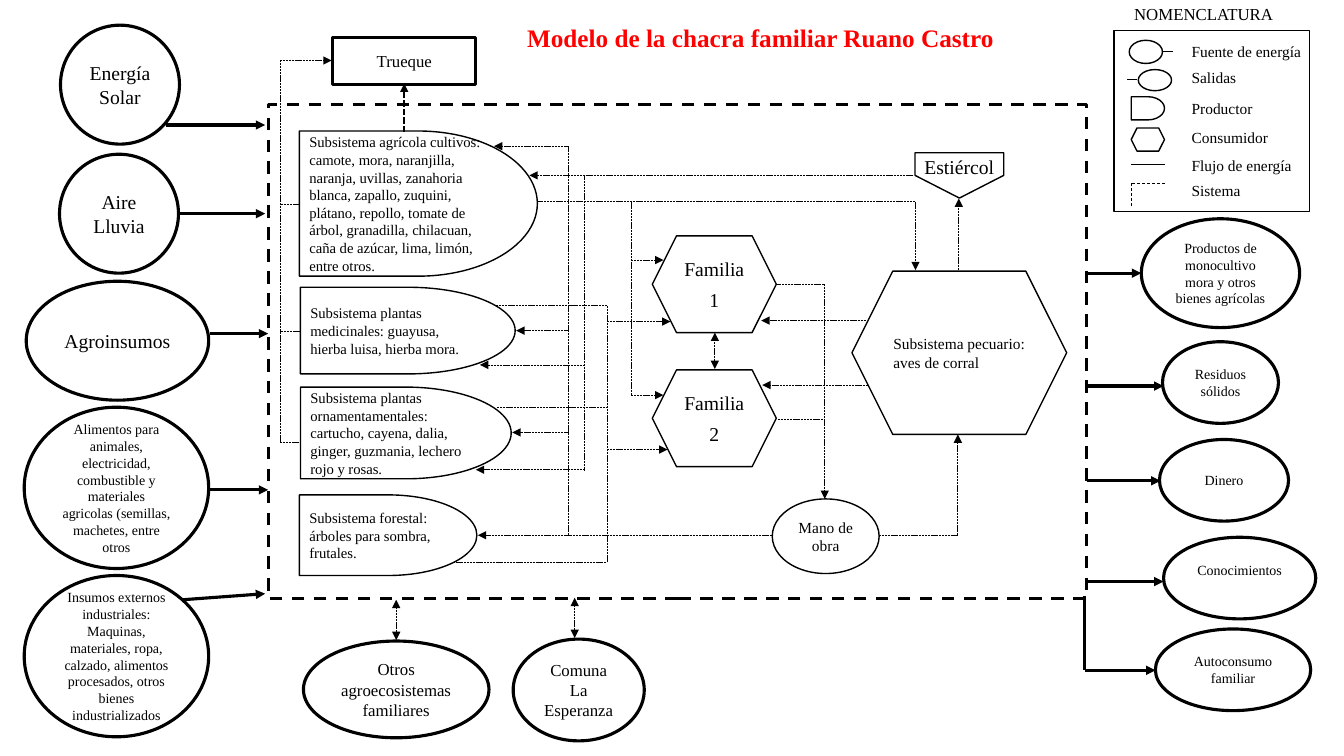
from lxml.etree import SubElement
from pptx import Presentation
from pptx.dml.color import RGBColor
from pptx.enum.dml import MSO_LINE
from pptx.enum.shapes import MSO_CONNECTOR, MSO_SHAPE
from pptx.enum.text import MSO_ANCHOR, PP_ALIGN
from pptx.oxml.ns import qn
from pptx.util import Inches, Pt

COLORS = {"ink": "000000", "paper": "FFFFFF", "title": "FF0000"}
FONT = "Times New Roman"
SLIDE_WIDTH, SLIDE_HEIGHT = 13.33, 7.5
ELLIPSE, DELAY = MSO_SHAPE.OVAL, MSO_SHAPE.FLOWCHART_DELAY
HEXAGON, RECTANGLE = MSO_SHAPE.HEXAGON, MSO_SHAPE.RECTANGLE
DOTTED, DASHED = MSO_LINE.SQUARE_DOT, MSO_LINE.DASH
THIN, NORMAL, THICK = 0.5, 1, 2.25

SYSTEM = (2.66, 1.04, 8.12, 4.9)
SYSTEM_RIGHT = SYSTEM[0] + SYSTEM[2]
SYSTEM_BOTTOM = SYSTEM[1] + SYSTEM[3]

INPUTS = [
    ((0.6, 0.25, 1.18, 1.18), 14, ["Energía", "Solar"]),
    ((0.59, 1.53, 1.18, 1.18), 14, ["Aire", "Lluvia"]),
    ((0.26, 2.79, 1.81, 1.18), 14, ["Agroinsumos"]),
    ((0.24, 4.04, 1.83, 1.6), 10, [
        "Alimentos para animales, electricidad, combustible y materiales agricolas (semillas, machetes, entre otros"]),
    ((0.24, 5.71, 1.83, 1.6), 10, [
        "Insumos externos industriales:",
        "Maquinas, materiales, ropa, calzado, alimentos procesados, otros bienes industrializados"]),
]
NEIGHBOURS = [
    ((3.01, 6.36, 1.84, 0.96), 12, ["Otros agroecosistemas familiares"]),
    ((5.09, 6.34, 1.3, 1.01), 12, ["Comuna La Esperanza"]),
]
OUTPUTS = [
    ((11.32, 2.17, 1.57, 1.08), 10, ["Productos de monocultivo mora y otros bienes agrícolas"]),
    ((11.53, 3.39, 1.15, 0.81), 10, ["Residuos sólidos"]),
    ((11.5, 4.36, 1.28, 0.81), 10, ["Dinero"]),
    ((11.46, 6.24, 1.54, 0.81), 10, ["Autoconsumo familiar"]),
]
KNOWLEDGE = (11.54, 5.33, 1.51, 0.81)
PRODUCERS = [
    ((2.97, 1.3, 2.36, 1.44),
     "Subsistema agrícola cultivos: camote, mora, naranjilla, naranja, uvillas, zanahoria blanca, zapallo, zuquini, "
     "plátano, repollo, tomate de árbol, granadilla, chilacuan, caña de azúcar, lima, limón, entre otros."),
    ((2.98, 2.85, 2.13, 0.86), "Subsistema plantas medicinales: guayusa, hierba luisa, hierba mora."),
    ((2.98, 3.84, 2.09, 0.91),
     "Subsistema plantas ornamentamentales: cartucho, cayena, dalia, ginger, guzmania, lechero rojo y rosas."),
    ((2.97, 4.91, 1.76, 0.8), "Subsistema forestal: árboles para sombra, frutales."),
]
FAMILY_LEFT, FAMILY_TOPS, FAMILY_SIZE = 6.47, [2.34, 3.67], (1.23, 0.96)

BARTER, MANURE, WORK, PLANTS, HARVEST, SUPPLY, HELP, ANIMALS = 2.78, 5.8, 5.64, 6.02, 6.26, 9.08, 8.18, 9.5
PLAIN_FLOWS = [
    [(2.97, 4.39), (BARTER, 4.39)],
    [(2.98, 3.29), (BARTER, 3.29)],
    [(2.98, 2.03), (BARTER, 2.03)],
    [(7.7, 2.82), (HELP, 2.82)],
    [(7.72, 4.16), (HELP, 4.16)],
    [(7.66, 5.31), (WORK, 5.31), (WORK, 1.45)],
    [(9.06, 1.74), (MANURE, 1.74), (MANURE, 4.66)],
    [(4.49, 5.58), (PLANTS, 5.58), (PLANTS, 3.03), (4.91, 3.03)],
    [(4.93, 4.04), (PLANTS, 4.04)],
    [(HARVEST, 2), (HARVEST, 3.92)],
]
ARROW_FLOWS = [
    [(BARTER, 4.39), (BARTER, 0.6), (3.29, 0.6)],
    [(HELP, 2.82), (HELP, 4.95)],
    [(8.72, 5.31), (ANIMALS, 5.31), (ANIMALS, 4.31)],
    [(9.51, 2.68), (9.51, 1.97)],
    [(8.61, 3.82), (7.56, 3.82)],
    [(8.59, 3.18), (7.55, 3.18)],
    [(5.34, 2), (SUPPLY, 2), (SUPPLY, 2.68)],
    [(HARVEST, 2.58), (6.58, 2.58)],
    [(HARVEST, 3.92), (6.58, 3.92)],
    [(PLANTS, 3.19), (6.65, 3.19)],
    [(PLANTS, 4.46), (6.62, 4.46)],
    [(WORK, 5.31), (4.74, 5.31)],
    [(WORK, 1.45), (4.9, 1.45)],
    [(WORK, 3.28), (5.12, 3.28)],
    [(WORK, 4.29), (5.08, 4.29)],
    [(MANURE, 1.74), (5.25, 1.74)],
    [(MANURE, 4.66), (4.72, 4.66)],
    [(MANURE, 3.62), (4.76, 3.62)],
]
EXCHANGES = [
    [(7.09, 3.66), (7.09, 3.3)],
    [(3.93, 6.35), (3.93, 5.95)],
    [(5.7, 6.33), (5.7, 5.93)],
]
BOUNDARY_FLOWS = [
    [(1.65, 1.24), (2.63, 1.24)],
    [(1.78, 2.12), (2.63, 2.12)],
    [(2.08, 3.31), (SYSTEM[0], 3.31)],
    [(2.08, 4.86), (SYSTEM[0], 4.86)],
    [(1.81, 5.95), (2.63, 5.89)],
    [(SYSTEM_RIGHT, 2.71), (11.32, 2.71)],
    [(SYSTEM_RIGHT, 3.83), (11.54, 3.83)],
    [(SYSTEM_RIGHT, 4.77), (11.51, 4.77)],
    [(SYSTEM_RIGHT, 5.77), (11.54, 5.77)],
    [(10.76, SYSTEM_BOTTOM - 0.03), (10.76, 6.65), (11.46, 6.65)],
]
LEGEND = (11.05, 0.3, 1.94, 1.8)
LEGEND_SYMBOLS = [
    (ELLIPSE, (11.2, 0.4, 0.33, 0.23)),
    (ELLIPSE, (11.29, 0.69, 0.33, 0.21)),
    (DELAY, (11.22, 0.96, 0.33, 0.23)),
    (HEXAGON, (11.22, 1.27, 0.33, 0.23)),
]
LEGEND_LINES = [
    [(11.53, 0.51), (11.63, 0.51)],
    [(11.18, 0.79), (11.28, 0.79)],
    [(11.22, 1.63), (11.55, 1.63)],
]
LEGEND_LABELS = [
    ("Fuente de energía", 0.51), ("Salidas", 0.77), ("Productor", 1.07),
    ("Consumidor", 1.36), ("Flujo de energía", 1.64), ("Sistema", 1.89),
]


def color(name):
    return RGBColor.from_string(COLORS[name])


def write(shape, lines, size=10, align=PP_ALIGN.CENTER, ink="ink", bold=False, gap=0, wrap=True):
    frame = shape.text_frame
    frame.word_wrap = wrap
    for index, line in enumerate(lines):
        paragraph = frame.add_paragraph() if index else frame.paragraphs[0]
        paragraph.alignment = align
        if index and gap:
            paragraph.space_before = Pt(gap)
        run = paragraph.add_run()
        run.text = line
        run.font.name, run.font.size, run.font.bold = FONT, Pt(size), bold
        run.font.color.rgb = color(ink)


def add_node(slide, kind, box, width=NORMAL, dash=None, filled=True):
    shape = slide.shapes.add_shape(kind, *map(Inches, box))
    shape.shadow.inherit = False
    if filled:
        shape.fill.solid()
        shape.fill.fore_color.rgb = color("paper")
    else:
        shape.fill.background()
    if width:
        shape.line.color.rgb = color("ink")
        shape.line.width = Pt(width)
        if dash:
            shape.line.dash_style = dash
    else:
        shape.line.fill.background()
    return shape


def add_label(slide, box, text, **style):
    write(slide.shapes.add_textbox(*map(Inches, box)), [text], align=PP_ALIGN.LEFT, **style)


def add_route(slide, points, width=THIN, dash=None, start=False, end=False):
    last = len(points) - 2
    for index, (first, second) in enumerate(zip(points, points[1:])):
        connector = slide.shapes.add_connector(MSO_CONNECTOR.STRAIGHT, *map(Inches, first + second))
        connector.line.color.rgb = color("ink")
        connector.line.width = Pt(width)
        if dash:
            connector.line.dash_style = dash
        properties = connector._element.spPr
        outline = properties.find(qn("a:ln"))
        if start and index == 0:
            SubElement(outline, qn("a:headEnd"), type="triangle")
        if end and index == last:
            SubElement(outline, qn("a:tailEnd"), type="triangle")
        SubElement(properties, qn("a:effectLst"))


def main():
    presentation = Presentation()
    presentation.slide_width, presentation.slide_height = Inches(SLIDE_WIDTH), Inches(SLIDE_HEIGHT)
    slide = presentation.slides.add_slide(presentation.slide_layouts[6])

    add_node(slide, RECTANGLE, SYSTEM, THICK, DASHED, filled=False)
    for number, top in enumerate(FAMILY_TOPS, 1):
        family = add_node(slide, HEXAGON, (FAMILY_LEFT, top) + FAMILY_SIZE)
        write(family, ["Familia", str(number)], size=14, gap=5)
    write(add_node(slide, HEXAGON, (8.45, 2.69, 2.13, 1.62)),
          ["Subsistema pecuario: aves de corral"], size=11, align=PP_ALIGN.LEFT)
    add_node(slide, MSO_SHAPE.PENTAGON, (9.29, 1.3, 0.45, 0.88)).rotation = 90
    add_label(slide, (9.07, 1.49, 0.9, 0.34), "Estiércol", size=14, wrap=False)
    for box, text in PRODUCERS:
        write(add_node(slide, DELAY, box), [text], size=10.5, align=PP_ALIGN.LEFT)
    write(add_node(slide, ELLIPSE, (7.66, 4.95, 1.06, 0.74)), ["Mano de obra"], size=11)
    write(add_node(slide, RECTANGLE, (3.3, 0.37, 1.42, 0.47), THICK), ["Trueque"], size=12)
    for box, size, lines in INPUTS + NEIGHBOURS + OUTPUTS:
        write(add_node(slide, ELLIPSE, box, THICK), lines, size=size)
    knowledge = add_node(slide, ELLIPSE, KNOWLEDGE, THICK)
    knowledge.text_frame.margin_bottom = Inches(0.21)
    write(knowledge, ["Conocimientos"])

    for points in PLAIN_FLOWS:
        add_route(slide, points, dash=DOTTED)
    for points in ARROW_FLOWS:
        add_route(slide, points, dash=DOTTED, end=True)
    for points in EXCHANGES:
        add_route(slide, points, dash=DOTTED, start=True, end=True)
    for points in BOUNDARY_FLOWS:
        add_route(slide, points, THICK, end=True)
    add_route(slide, [(4.01, 1.31), (4.01, 0.83)], 1.5, DOTTED, end=True)

    add_label(slide, (5.13, 0.17, 5.34, 0.4), "Modelo de la chacra familiar Ruano Castro",
              size=18, ink="title", bold=True)
    add_label(slide, (11.15, -0.01, 1.59, 0.3), "NOMENCLATURA", size=12, wrap=False)
    add_node(slide, RECTANGLE, LEGEND, filled=False)
    for text, middle in LEGEND_LABELS:
        label = add_node(slide, RECTANGLE, (11.72, middle - 0.06, 1.36, 0.12), width=0, filled=False)
        label.text_frame.vertical_anchor = MSO_ANCHOR.MIDDLE
        write(label, [text], size=11, align=PP_ALIGN.LEFT)
    for kind, box in LEGEND_SYMBOLS:
        add_node(slide, kind, box)
    for points in LEGEND_LINES:
        add_route(slide, points)
    add_route(slide, [(11.55, 1.82), (11.22, 1.82), (11.22, 2.04)], dash=DASHED)
    presentation.save("out.pptx")


if __name__ == "__main__":
    main()
